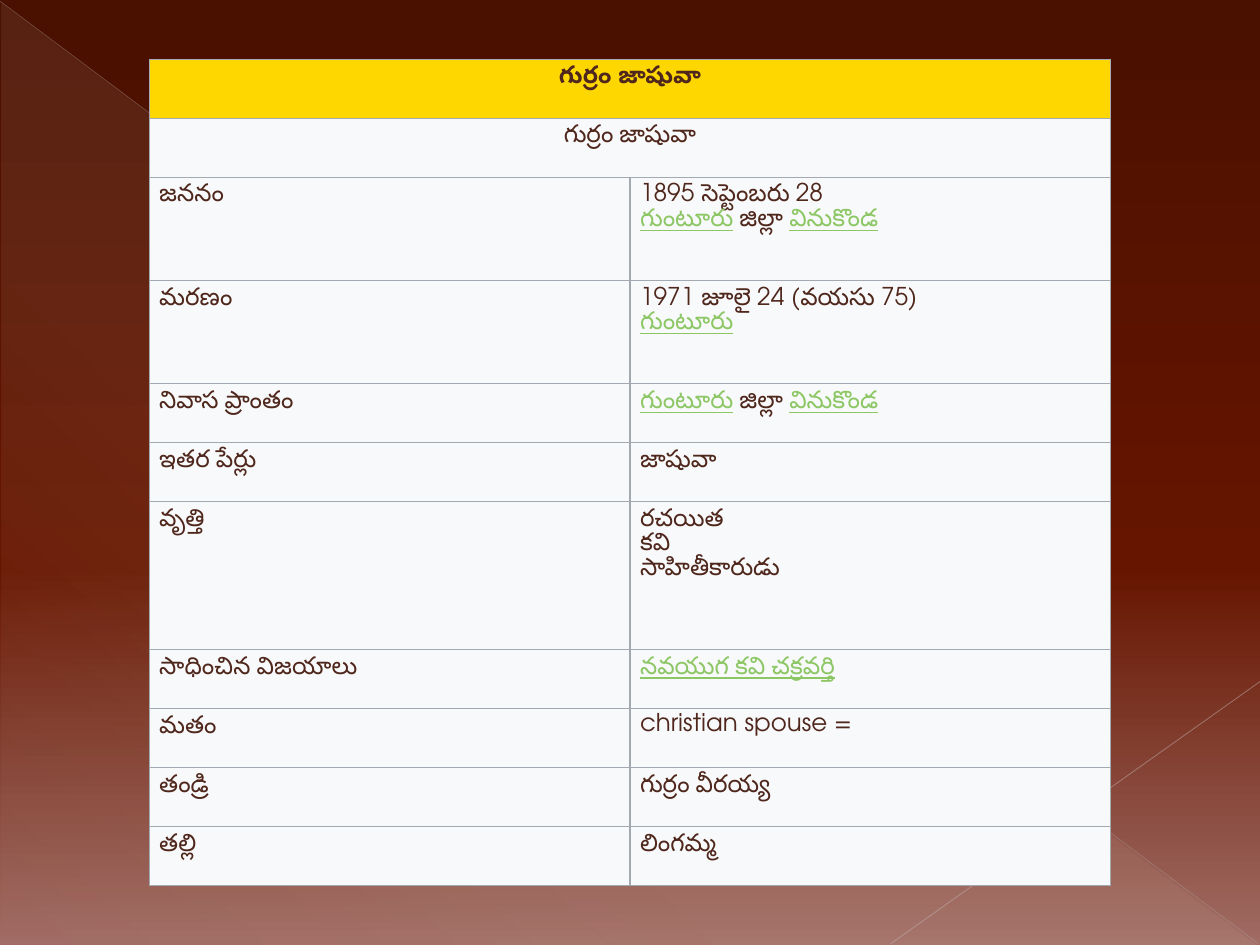
import pptx
import pptx.dml.color
import pptx.enum.shapes
import pptx.enum.text
import pptx.oxml
import pptx.oxml.ns
import pptx.util
from lxml import etree

Pt = pptx.util.Pt
qn = pptx.oxml.ns.qn


class Theme:
    font = "TeX Gyre Adventor"
    size = 14
    text = "4F271C"
    link = "8DC765"
    header = "FFD700"
    cell = "F8F9FA"
    border = "A2A9B1"
    border_width = 0.75
    # Gradient stops: position, colour, opacity (all but colour in percent)
    background = [(0, "4A1000", 100), (60, "661500", 100), (100, "A06B63", 100)]
    triangle = [(0, "E7DEC9", 10), (70, "E7DEC9", 8), (100, "E7DEC9", 1)]


# Parts between bars are shown as links
TITLES = ["గుర్రం జాషువా", "గుర్రం జాషువా"]
FACTS = [
    ("జననం", "1895 సెప్టెంబరు 28\n|గుంటూరు| జిల్లా |వినుకొండ|"),
    ("మరణం", "1971 జూలై 24 (వయసు 75)\n|గుంటూరు|"),
    ("నివాస ప్రాంతం", "|గుంటూరు| జిల్లా |వినుకొండ|"),
    ("ఇతర పేర్లు", "జాషువా"),
    ("వృత్తి", "రచయిత\nకవి\nసాహితీకారుడు"),
    ("సాధించిన విజయాలు", "|నవయుగ కవి చక్రవర్తి|"),
    ("మతం", "christian spouse ="),
    ("తండ్రి", "గుర్రం వీరయ్య"),
    ("తల్లి", "లింగమ్మ"),
]
ROW_HEIGHTS = {1: 33.75, 2: 59, 3: 84.4}  # by number of text lines
COLUMN_WIDTH = 274.8


def rgb(color):
    return pptx.dml.color.RGBColor.from_string(color)


def add_alpha(color_element, percent):
    alpha = etree.SubElement(color_element, qn("a:alpha"))
    alpha.set("val", str(percent * 1000))


def set_gradient(fill, element, stops, angle):
    fill.gradient()
    fill.gradient_angle = 360 - angle
    stop_list = element.find(".//" + qn("a:gsLst"))
    for old in list(stop_list):
        stop_list.remove(old)
    for position, color, opacity in stops:
        stop = etree.SubElement(stop_list, qn("a:gs"), pos=str(position * 1000))
        add_alpha(etree.SubElement(stop, qn("a:srgbClr"), val=color), opacity)


def add_triangle(s, left, top, width, height):
    kind = pptx.enum.shapes.MSO_SHAPE.RIGHT_TRIANGLE
    sp = s.shapes.add_shape(kind, Pt(left), Pt(top), Pt(width), Pt(height))
    sp.shadow.inherit = False
    sp.line.fill.background()
    set_gradient(sp.fill, sp._element, Theme.triangle, 133)


def add_line(s, start, end, color, width, opacity):
    kind = pptx.enum.shapes.MSO_CONNECTOR.STRAIGHT
    line = s.shapes.add_connector(kind, *map(Pt, start + end))
    line.line.color.rgb = rgb(color)
    line.line.width = Pt(width)
    add_alpha(line._element.spPr.find(".//" + qn("a:srgbClr")), opacity)
    etree.SubElement(line._element.spPr, qn("a:effectLst"))


def set_borders(cell):
    tc_pr = cell._tc.get_or_add_tcPr()
    for index, side in enumerate(("lnL", "lnR", "lnT", "lnB")):
        ln = etree.Element(qn("a:" + side), w=str(Pt(Theme.border_width)))
        fill = etree.SubElement(ln, qn("a:solidFill"))
        etree.SubElement(fill, qn("a:srgbClr"), val=Theme.border)
        tc_pr.insert(index, ln)


def add_run(p, text, bold, is_link):
    r = p.add_run()
    r.text = text
    r.font.name = Theme.font
    r.font.size = Pt(Theme.size)
    r.font.bold = bold
    r.font.underline = is_link
    r.font.color.rgb = rgb(Theme.link if is_link else Theme.text)


def style_cell(cell, color):
    cell.fill.solid()
    cell.fill.fore_color.rgb = rgb(color)
    cell.margin_left = cell.margin_right = Pt(5.76)
    cell.margin_top = cell.margin_bottom = Pt(2.88)
    set_borders(cell)


def write_cell(cell, text, bold=False, centered=False):
    p = cell.text_frame.paragraphs[0]
    if centered:
        p.alignment = pptx.enum.text.PP_ALIGN.CENTER
    for line_number, line in enumerate(text.split("\n")):
        if line_number:
            p.add_line_break()
        for index, part in enumerate(line.split("|")):
            if part:
                add_run(p, part, bold, index % 2 == 1)
    for br in p._p.findall(qn("a:br")):
        etree.SubElement(br, qn("a:rPr"), sz=str(Theme.size * 100))


def add_fact_table(s, left, top):
    heights = [ROW_HEIGHTS[1]] * len(TITLES)
    heights += [ROW_HEIGHTS[value.count("\n") + 1] for _, value in FACTS]
    table = s.shapes.add_table(len(heights), 2, Pt(left), Pt(top),
                               Pt(2 * COLUMN_WIDTH), Pt(sum(heights))).table
    table.first_row = table.horz_banding = False
    for column in table.columns:
        column.width = Pt(COLUMN_WIDTH)
    for index, (row, height) in enumerate(zip(table.rows, heights)):
        row.height = Pt(height)
        for cell in row.cells:
            style_cell(cell, Theme.cell if index else Theme.header)

    # Title rows span both columns
    for index, title in enumerate(TITLES):
        cell = table.cell(index, 0)
        cell.merge(table.cell(index, 1))
        write_cell(cell, title, bold=index == 0, centered=True)

    # Label and value rows
    for index, fact in enumerate(FACTS, len(TITLES)):
        for column, text in enumerate(fact):
            write_cell(table.cell(index, column), text)


def main():
    prs = pptx.Presentation()
    prs.slide_width, prs.slide_height = Pt(720), Pt(540)
    s = prs.slides.add_slide(prs.slide_layouts[6])

    # Background and its decoration
    set_gradient(s.background.fill, s.element, Theme.background, 90)
    add_triangle(s, 0.7, 1.4, 718.6, 538.6)
    add_line(s, (0, 0.7), (719.3, 539.3), "BDB3B2", 0.39, 35)
    add_line(s, (720, 389.5), (509, 539.3), "C5BCBB", 0.47, 45)

    # Table of facts
    add_fact_table(s, 85.2, 33.75)
    prs.save("out.pptx")


if __name__ == "__main__":
    main()
